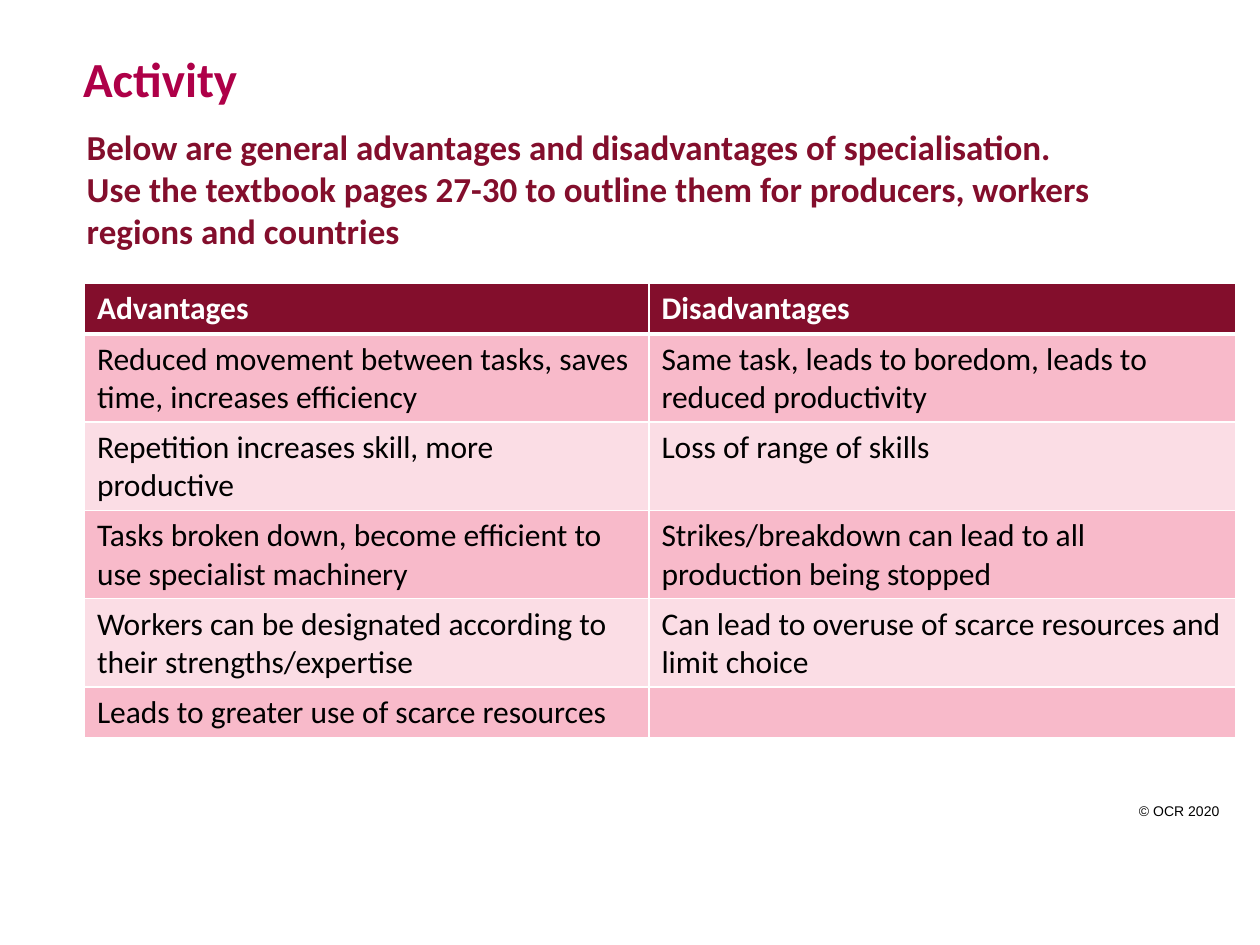
import pptx
import pptx.util
import pptx.dml.color
import pptx.enum.text
import pptx.oxml.ns
from lxml import etree

Inches, Pt = pptx.util.Inches, pptx.util.Pt

THEME = {
    "font": "Calibri", "small font": "Arial",
    "title": "AE0048", "dark": "830E2C", "bands": ("F8BACA", "FBDDE5"),
    "white": "FFFFFF", "black": "000000",
    "title size": 28, "task size": 20, "cell size": 18, "small size": 8,
}
TITLE = "Activity"
TASK = ("Below are general advantages and disadvantages of specialisation. "
        "Use the textbook pages 27-30 to outline them for producers, workers "
        "regions and countries")
CREDIT = "© OCR 2020"
ROWS = [
    ("Advantages", "Disadvantages"),
    ("Reduced movement between tasks, saves time, increases efficiency",
     "Same task, leads to boredom, leads to reduced productivity"),
    ("Repetition increases skill, more productive", "Loss of range of skills"),
    ("Tasks broken down, become efficient to use specialist machinery",
     "Strikes/breakdown can lead to all production being stopped"),
    ("Workers can be designated according to their strengths/expertise",
     "Can lead to overuse of scarce resources and limit choice"),
    ("Leads to greater use of scarce resources", ""),
]
WIDTHS = (4.48, 4.66)
SHORT, TALL = 0.4, 0.7
HEIGHTS = [SHORT] + [TALL] * (len(ROWS) - 2) + [SHORT]


def colour(name):
    return pptx.dml.color.RGBColor.from_string(name)


def write(frame, text, size, tint, bold=False, font=THEME["font"]):
    frame.text = text
    for run in frame.paragraphs[0].runs:
        run.font.name = font
        run.font.size = Pt(size)
        run.font.bold = bold
        run.font.color.rgb = colour(tint)


def edge(cell, side, width):
    qn = pptx.oxml.ns.qn
    line = etree.SubElement(cell._tc.get_or_add_tcPr(), qn("a:ln" + side),
                            w=str(Pt(width)))
    fill = etree.SubElement(line, qn("a:solidFill"))
    etree.SubElement(fill, qn("a:srgbClr"), val=THEME["white"])


def add_grid(slide):
    grid = slide.shapes.add_table(
        len(ROWS), len(WIDTHS), Inches(0.67), Inches(2.25),
        Inches(sum(WIDTHS)), Inches(sum(HEIGHTS))).table
    for col, width in zip(grid.columns, WIDTHS):
        col.width = Inches(width)
    for r, (row, height) in enumerate(zip(ROWS, HEIGHTS)):
        grid.rows[r].height = Inches(height)
        head = r == 0
        for c, text in enumerate(row):
            cell = grid.cell(r, c)
            write(cell.text_frame, text, THEME["cell size"],
                  THEME["white" if head else "black"], head)
            for side in "LRTB":
                thick = (r, side) in ((0, "B"), (1, "T"))
                edge(cell, side, 3 if thick else 1)
            cell.fill.solid()
            cell.fill.fore_color.rgb = colour(
                THEME["dark"] if head else THEME["bands"][(r - 1) % 2])


def main():
    deck = pptx.Presentation()
    deck.slide_width, deck.slide_height = Inches(10), Inches(7.5)
    slide = deck.slides.add_slide(deck.slide_layouts[5])

    title = slide.shapes.title
    title.left, title.top = Inches(0.56), Inches(0.26)
    title.width, title.height = Inches(9), Inches(0.71)
    write(title.text_frame, TITLE, THEME["title size"], THEME["title"], True)
    title.text_frame.paragraphs[0].alignment = pptx.enum.text.PP_ALIGN.LEFT
    title.text_frame.vertical_anchor = pptx.enum.text.MSO_ANCHOR.MIDDLE

    task = slide.shapes.add_textbox(
        Inches(0.59), Inches(0.95), Inches(8.27), Inches(1.11)).text_frame
    task.word_wrap = True
    write(task, TASK, THEME["task size"], THEME["dark"], True)

    add_grid(slide)

    credit = slide.shapes.add_textbox(
        Inches(8.94), Inches(6.32), Inches(0.85), Inches(0.24)).text_frame
    credit.word_wrap = False
    write(credit, CREDIT, THEME["small size"], THEME["black"],
          font=THEME["small font"])

    deck.save("out.pptx")


if __name__ == "__main__":
    main()
